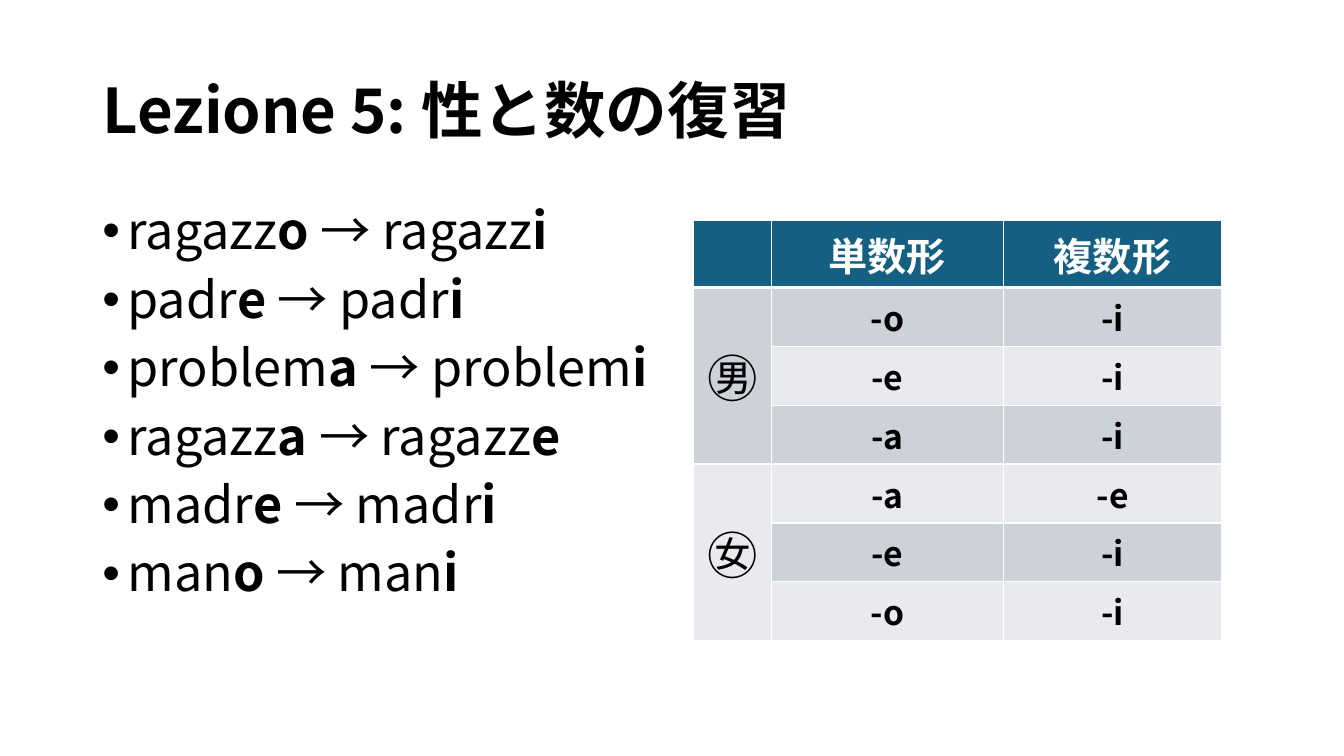
from lxml import etree
from pptx import Presentation
from pptx.dml.color import RGBColor
from pptx.enum import text
from pptx.oxml import ns
from pptx.util import Pt

FONT = "Noto Sans CJK JP"
COLORS = {"ink": "000000", "white": "FFFFFF", "header": "156082",
          "dark": "CCD2D8", "light": "E8EAED"}
WORDS = [("ragazz", "o", "i"), ("padr", "e", "i"), ("problem", "a", "i"),
         ("ragazz", "a", "e"), ("madr", "e", "i"), ("man", "o", "i")]
GENDERS = {1: "㊚", 4: "㊛"}
ENDINGS_PER_GENDER = 3


def color(name):
    return RGBColor.from_string(COLORS[name])


def add_span(para, words, size, bold=False, ink="ink"):
    span = para.add_run()
    span.text = words
    span.font.name = FONT
    span.font.size = Pt(size)
    span.font.bold = bold
    span.font.color.rgb = color(ink)
    # Japanese characters and arrows take the East Asian font
    east_asian = etree.SubElement(span.font._element, ns.qn("a:ea"))
    east_asian.set("typeface", FONT)


def add_bullet(para):
    props = para._p.get_or_add_pPr()
    props.set("marL", str(Pt(18)))
    props.set("indent", str(Pt(-18)))
    etree.SubElement(props, ns.qn("a:buFont")).set("typeface", "Arial")
    etree.SubElement(props, ns.qn("a:buChar")).set("char", "•")


def add_borders(cell, bottom):
    props = cell._tc.get_or_add_tcPr()
    widths = {"lnL": 1, "lnR": 1, "lnT": 1, "lnB": bottom}
    for index, (side, width) in enumerate(widths.items()):
        line = etree.Element(ns.qn(f"a:{side}"), w=str(Pt(width)))
        fill = etree.SubElement(line, ns.qn("a:solidFill"))
        etree.SubElement(fill, ns.qn("a:srgbClr")).set("val", COLORS["white"])
        props.insert(index, line)


def fill_cell(cell, words, fill, size=24, bold=True, ink="ink", bottom=1):
    cell.fill.solid()
    cell.fill.fore_color.rgb = color(fill)
    add_borders(cell, bottom)
    cell.vertical_anchor = text.MSO_ANCHOR.MIDDLE
    para = cell.text_frame.paragraphs[0]
    para.alignment = text.PP_ALIGN.CENTER
    if words:
        add_span(para, words, size, bold, ink)


def set_title(page, words):
    title = page.shapes.title
    title.left, title.top = Pt(66), Pt(28.75)
    title.width, title.height = Pt(828), Pt(104.4)
    frame = title.text_frame
    frame.auto_size = text.MSO_AUTO_SIZE.NONE
    frame.vertical_anchor = text.MSO_ANCHOR.MIDDLE
    para = frame.paragraphs[0]
    para.alignment = text.PP_ALIGN.LEFT
    para.line_spacing = 0.9
    add_span(para, words, 44, bold=True)


def add_endings_table(page):
    widths = [55.4, 165.6, 156.2]
    heights = [47.2] + [41.9] * len(WORDS)
    table = page.shapes.add_table(len(heights), len(widths), Pt(495.6), Pt(157.7),
                                  Pt(sum(widths)), Pt(sum(heights))).table
    table.horz_banding = False
    for column, width in zip(table.columns, widths):
        column.width = Pt(width)
    for row, height in zip(table.rows, heights):
        row.height = Pt(height)

    for column, heading in enumerate(["", "単数形", "複数形"]):
        fill_cell(table.cell(0, column), heading, "header", 28, ink="white", bottom=3)
    for row, (_, singular, plural) in enumerate(WORDS, start=1):
        band = "dark" if row % 2 else "light"
        fill_cell(table.cell(row, 0), GENDERS.get(row), band, 36, bold=False)
        fill_cell(table.cell(row, 1), f"-{singular}", band)
        fill_cell(table.cell(row, 2), f"-{plural}", band)
    for row in GENDERS:
        table.cell(row, 0).merge(table.cell(row + ENDINGS_PER_GENDER - 1, 0))


def add_word_list(page):
    box = page.shapes.add_textbox(Pt(66), Pt(143.75), Pt(828), Pt(342.6))
    frame = box.text_frame
    frame.word_wrap = True
    for index, (stem, singular, plural) in enumerate(WORDS):
        para = frame.add_paragraph() if index else frame.paragraphs[0]
        para.line_spacing = 0.9
        para.space_before = Pt(10)
        add_bullet(para)
        add_span(para, stem, 36)
        add_span(para, f"{singular} ", 36, bold=True)
        add_span(para, f"→ {stem}", 36)
        add_span(para, plural, 36, bold=True)


def main():
    deck = Presentation()
    deck.slide_width, deck.slide_height = Pt(960), Pt(540)
    page = deck.slides.add_slide(deck.slide_layouts.get_by_name("Title Only"))
    set_title(page, "Lezione 5: 性と数の復習")
    add_endings_table(page)
    add_word_list(page)
    deck.save("out.pptx")


if __name__ == "__main__":
    main()
